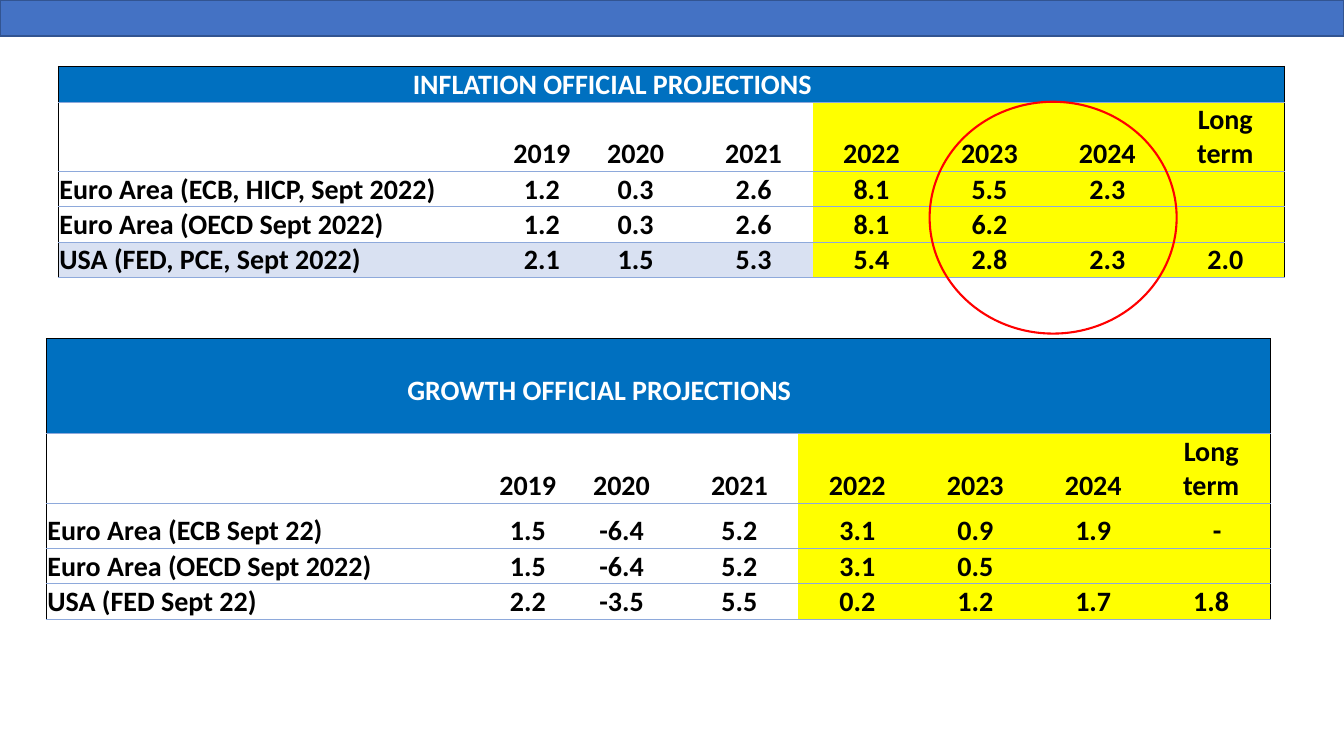
from lxml.etree import SubElement
from pptx import Presentation
from pptx.dml.color import RGBColor
from pptx.enum.shapes import MSO_SHAPE
from pptx.enum.text import MSO_ANCHOR, PP_ALIGN
from pptx.oxml.ns import qn
from pptx.util import Inches, Pt

BLUE, YELLOW, PALE = "0070C0", "FFFF00", "D9E1F2"
BLACK, WHITE, RULE = "000000", "FFFFFF", "8EA9DB"
PLAIN_TABLE = "{2D5ABB26-0587-4C30-8999-92F81FD0307C}"
YEARS = ["", "2019", "2020", "2021", "2022", "2023", "2024", "Long term"]
FIRST_FORECAST = YEARS.index("2022")
LONG_TERM = len(YEARS) - 1

INFLATION = [
    ["Euro Area (ECB, HICP, Sept 2022)", "1.2", "0.3", "2.6", "8.1", "5.5", "2.3", ""],
    ["Euro Area (OECD Sept 2022)", "1.2", "0.3", "2.6", "8.1", "6.2", "", ""],
    ["USA (FED, PCE, Sept 2022)", "2.1", "1.5", "5.3", "5.4", "2.8", "2.3", "2.0"],
]
GROWTH = [
    ["Euro Area (ECB Sept 22)", "1.5", "-6.4", "5.2", "3.1", "0.9", "1.9", "-"],
    ["Euro Area (OECD Sept 2022)", "1.5", "-6.4", "5.2", "3.1", "0.5", "", ""],
    ["USA (FED Sept 22)", "2.2", "-3.5", "5.5", "0.2", "1.2", "1.7", "1.8"],
]


def rgb(value):
    return RGBColor.from_string(value)


def write(cell, text, color=BLACK, align=PP_ALIGN.CENTER, size=20, font="Calibri",
          left=0.01, right=0.01, bottom=0):
    cell.vertical_anchor = MSO_ANCHOR.BOTTOM
    cell.margin_left, cell.margin_right = Inches(left), Inches(right)
    cell.margin_top, cell.margin_bottom = Inches(0.01), Inches(bottom)
    paragraph = cell.text_frame.paragraphs[0]
    paragraph.alignment = align
    paragraph.font.size = Pt(size)
    if text:
        run = paragraph.add_run()
        run.text = text
        run.font.name, run.font.size, run.font.bold = font, Pt(size), True
        run.font.color.rgb = rgb(color)


def paint(cell, fill, edges):
    properties = cell._tc.get_or_add_tcPr()
    for side in ("L", "R", "T", "B"):
        color, width = edges.get(side, (None, 0))
        line = SubElement(properties, qn(f"a:ln{side}"), w=str(Pt(width)))
        if color:
            solid = SubElement(line, qn("a:solidFill"))
            SubElement(solid, qn("a:srgbClr"), val=color)
        else:
            SubElement(line, qn("a:noFill"))
    if fill:
        cell.fill.solid()
        cell.fill.fore_color.rgb = rgb(fill)
    else:
        cell.fill.background()


class ProjectionSlide:
    outer = (BLACK, 1)
    inner = (RULE, 0.5)

    def __init__(self, deck):
        self.slide = deck.slides.add_slide(deck.slide_layouts[6])

    def shape(self, kind, left, top, width, height, fill, line, weight):
        shape = self.slide.shapes.add_shape(
            kind, Inches(left), Inches(top), Inches(width), Inches(height))
        shape.shadow.inherit = False
        if fill:
            shape.fill.solid()
            shape.fill.fore_color.rgb = rgb(fill)
        else:
            shape.fill.background()
        shape.line.color.rgb = rgb(line)
        shape.line.width = Pt(weight)

    def edges(self, row, column):
        sides = {"T": self.inner if row else self.outer, "B": self.inner}
        if column == 0:
            sides["L"] = self.outer
        if column == LONG_TERM:
            sides["R"] = self.outer
        return sides

    def projections(self, title, records, left, top, label_width, heights,
                    title_bottom=0, tinted_row=None):
        widths = [label_width, 0.69] + [1.17] * 6
        rows = [[title] + [""] * LONG_TERM, YEARS] + records
        table = self.slide.shapes.add_table(
            len(rows), len(YEARS), Inches(left), Inches(top),
            Inches(sum(widths)), Inches(sum(heights))).table
        table.first_row = table.horz_banding = False
        table._tbl.tblPr.find(qn("a:tableStyleId")).text = PLAIN_TABLE
        for column, width in zip(table.columns, widths):
            column.width = Inches(width)
        for row, height in zip(table.rows, heights):
            row.height = Inches(height)
        table.cell(0, 0).merge(table.cell(0, LONG_TERM - 1))
        for r, values in enumerate(rows):
            for c, value in enumerate(values):
                cell = table.cell(r, c)
                if r == 0:
                    fill = BLUE
                    write(cell, value, color=WHITE, bottom=title_bottom)
                else:
                    tint = PALE if r == tinted_row else None
                    fill = YELLOW if c >= FIRST_FORECAST else tint
                    padding = 0.05 if c else 0.01
                    write(cell, value, left=0.17 if value == "-" else padding,
                          right=padding,
                          align=PP_ALIGN.CENTER if c else PP_ALIGN.LEFT)
                paint(cell, fill, self.edges(r, c))


def main():
    deck = Presentation()
    deck.slide_width, deck.slide_height = Inches(13.33), Inches(7.5)
    page = ProjectionSlide(deck)
    page.projections("INFLATION OFFICIAL PROJECTIONS", INFLATION, 0.58, 0.66, 4.45,
                     [0.35, 0.69, 0.35, 0.35, 0.35], tinted_row=4)
    page.shape(MSO_SHAPE.RECTANGLE, 0, 0, 13.33, 0.36, "4472C4", "325491", 1)
    page.projections("GROWTH OFFICIAL PROJECTIONS", GROWTH, 0.46, 3.36, 4.43,
                     [0.94, 0.69, 0.45, 0.35, 0.35], title_bottom=0.25)
    page.shape(MSO_SHAPE.OVAL, 9.22, 1.01, 2.45, 2.3, None, "FF0000", 1.5)
    deck.save("out.pptx")


if __name__ == "__main__":
    main()
